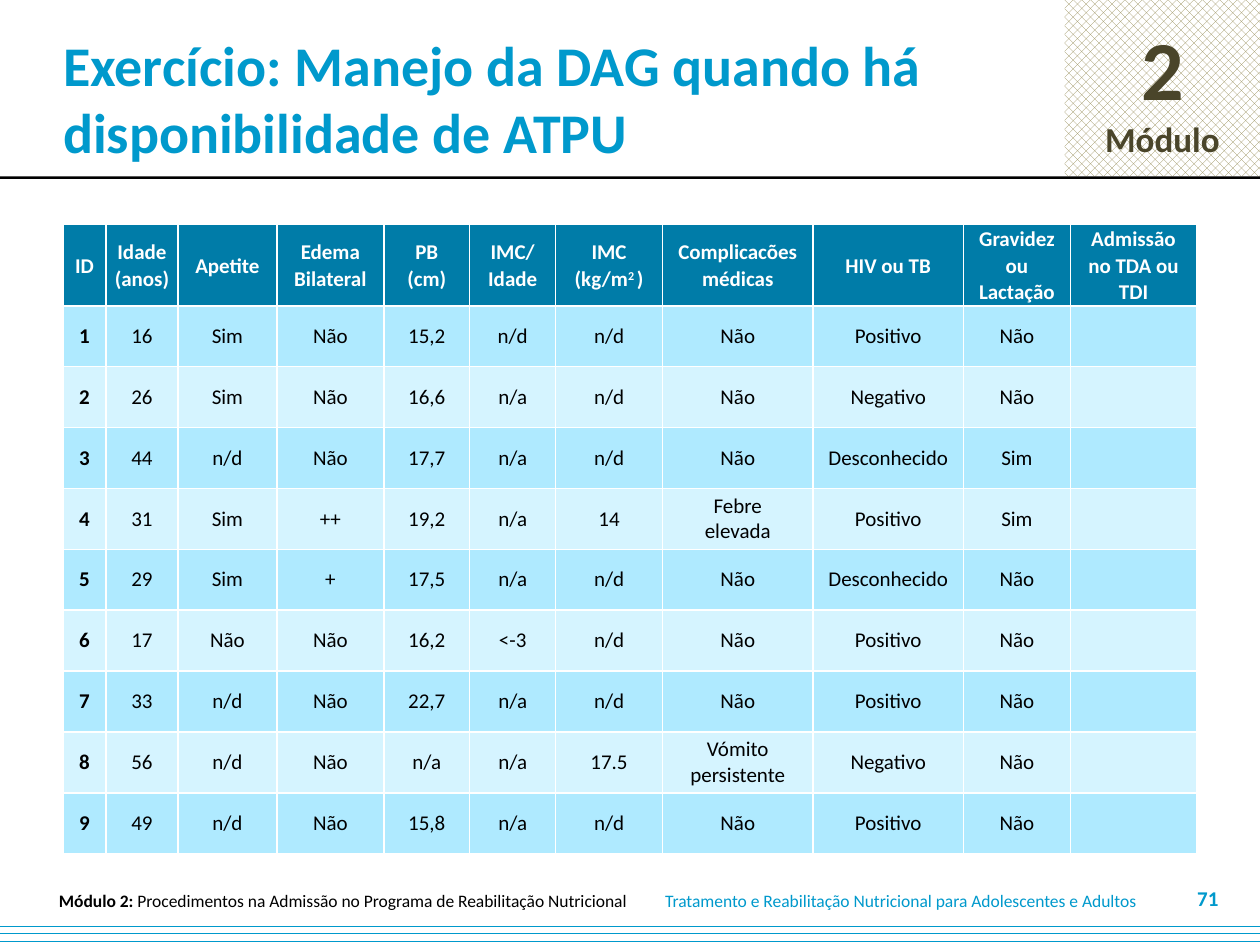
from lxml.etree import SubElement
from pptx import Presentation
from pptx.dml.color import RGBColor
from pptx.enum.dml import MSO_PATTERN as Pattern
from pptx.enum.shapes import MSO_SHAPE as Shape
from pptx.enum.text import MSO_ANCHOR as Anchor, PP_ALIGN as Align
from pptx.oxml.ns import qn
from pptx.util import Pt

# Content
TITLE = "Exercício: Manejo da DAG quando há disponibilidade de ATPU"
HEADERS = [
    "ID", "Idade\n(anos)", "Apetite", "Edema\nBilateral", "PB\n(cm)",
    "IMC/\nIdade", "IMC\n(kg/m^2 ^)", "Complicacões\nmédicas", "HIV ou TB",
    "Gravidez ou Lactação", "Admissão no TDA ou TDI",
]
PATIENTS = [
    ("1", "16", "Sim", "Não", "15,2", "n/d", "n/d", "Não", "Positivo", "Não", ""),
    ("2", "26", "Sim", "Não", "16,6", "n/a", "n/d", "Não", "Negativo", "Não", ""),
    ("3", "44", "n/d", "Não", "17,7", "n/a", "n/d", "Não", "Desconhecido", "Sim", ""),
    ("4", "31", "Sim", "++", "19,2", "n/a", "14", "Febre\nelevada", "Positivo", "Sim", ""),
    ("5", "29", "Sim", "+", "17,5", "n/a", "n/d", "Não", "Desconhecido", "Não", ""),
    ("6", "17", "Não", "Não", "16,2", "<-3", "n/d", "Não", "Positivo", "Não", ""),
    ("7", "33", "n/d", "Não", "22,7", "n/a", "n/d", "Não", "Positivo", "Não", ""),
    ("8", "56", "n/d", "Não", "n/a", "n/a", "17.5", "Vómito persistente", "Negativo", "Não", ""),
    ("9", "49", "n/d", "Não", "15,8", "n/a", "n/d", "Não", "Positivo", "Não", ""),
]
COLUMN_WIDTHS = [24.6, 41.1, 56.6, 61.1, 49.1, 49.1, 61.1, 86, 86, 61.1, 72.2]
HEADER_HEIGHT, ROW_HEIGHT = 46.4, 34.8

# Colours
BLUE, HEADER_BLUE, BROWN, OLIVE = "0099CC", "007CA8", "4A452A", "948A54"
BLACK, WHITE = "000000", "FFFFFF"
ROW_FILLS = ["AFEAFF", "D5F4FF"]


def rgb(value):
    return RGBColor.from_string(value)


def add_span(para, text, size, color, bold=False):
    span = para.add_run()
    span.text = text
    for name, value in {"name": "Calibri", "size": Pt(size), "bold": bold}.items():
        setattr(span.font, name, value)
    span.font.color.rgb = rgb(color)
    return span


def fill_frame(frame, paragraphs, align):
    """Each paragraph is a list of (text, size, colour, bold)."""
    frame.vertical_anchor = Anchor.MIDDLE
    for index, spans in enumerate(paragraphs):
        para = frame.add_paragraph() if index else frame.paragraphs[0]
        para.alignment = align
        for span in spans:
            add_span(para, *span)


def add_text(page, place, paragraphs, align=Align.LEFT, wrap=True, left_inset=7.2):
    frame = page.shapes.add_textbox(*map(Pt, place)).text_frame
    frame.word_wrap = wrap
    frame.margin_left = Pt(left_inset)
    fill_frame(frame, paragraphs, align)


def add_block(page, place, color, pattern=None):
    block = page.shapes.add_shape(Shape.RECTANGLE, *map(Pt, place))
    block.shadow.inherit = False
    block.line.fill.background()
    if pattern is None:
        block.fill.solid()
        block.fill.fore_color.rgb = rgb(color)
    else:
        block.fill.patterned()
        block.fill.pattern = pattern
        block.fill.fore_color.rgb = rgb(color)
        block.fill.back_color.rgb = rgb(WHITE)
    return block


def add_borders(cell, sides):
    props = cell._tc.get_or_add_tcPr()
    for side in sides:
        line = SubElement(props, qn(f"a:ln{side}"), w=str(Pt(1)))
        SubElement(SubElement(line, qn("a:solidFill")), qn("a:srgbClr"), val=WHITE)


def fill_cell(cell, text, fill, color, bold, spacing):
    for name, value in {"margin_left": Pt(5), "margin_right": Pt(5), "margin_top": 0,
                        "margin_bottom": 0, "vertical_anchor": Anchor.MIDDLE}.items():
        setattr(cell, name, value)
    cell.fill.solid()
    cell.fill.fore_color.rgb = rgb(fill)
    for index, line in enumerate(text.split("\n")):
        frame = cell.text_frame
        para = frame.add_paragraph() if index else frame.paragraphs[0]
        para.alignment = Align.CENTER
        para.line_spacing = spacing
        # Text between carets is superscript
        for part, piece in enumerate(line.split("^")):
            if piece:
                span = add_span(para, piece, 12, color, bold)
                if part % 2:
                    span._r.get_or_add_rPr().set("baseline", "30000")


def add_patient_table(page):
    rows = [HEADERS, *PATIENTS]
    heights = [HEADER_HEIGHT] + [ROW_HEIGHT] * len(PATIENTS)
    table = page.shapes.add_table(
        len(rows), len(HEADERS), Pt(36), Pt(128.4),
        Pt(sum(COLUMN_WIDTHS)), Pt(sum(heights))).table
    for column, width in zip(table.columns, COLUMN_WIDTHS):
        column.width = Pt(width)
    for r, (texts, height) in enumerate(zip(rows, heights)):
        table.rows[r].height = Pt(height)
        for c, text in enumerate(texts):
            cell = table.cell(r, c)
            inner = {"L": c > 0, "R": c < len(HEADERS) - 1, "T": r > 0, "B": r < len(rows) - 1}
            add_borders(cell, [side for side, shown in inner.items() if shown])
            if r == 0:
                fill_cell(cell, text, HEADER_BLUE, WHITE, True, 1.05)
            else:
                fill_cell(cell, text, ROW_FILLS[(r - 1) % 2], BLACK, c == 0, 1.0)


def main():
    deck = Presentation()
    deck.slide_width, deck.slide_height = Pt(720), Pt(540)
    page = deck.slides.add_slide(deck.slide_layouts[6])

    # Module badge, header rule and bottom band
    badge = add_block(page, (608.4, 0, 111.6, 100.8), OLIVE, Pattern.PERCENT_50)
    fill_frame(badge.text_frame,
               [[("2", 48, BROWN, True)], [("Módulo", 20, BROWN, True)]], Align.CENTER)
    add_block(page, (-1.4, 100.8, 721.4, 1.4), BLACK)
    add_block(page, (0, 524.9, 720, 15.1), BLUE, Pattern.DASHED_HORIZONTAL)

    # Footer
    add_text(page, (373, 507.6, 291.6, 14.4),
             [[("Tratamento e Reabilitação Nutricional para Adolescentes e Adultos",
                10, BLUE)]], wrap=False)
    add_text(page, (20.9, 507.6, 349.9, 14.4),
             [[("Módulo 2: ", 10, BLACK, True),
               ("Procedimentos na Admissão no Programa de Reabilitação Nutricional",
                10, BLACK)]], Align.CENTER, wrap=False)
    add_text(page, (667.4, 504, 36, 18), [[("71", 12, BLUE, True)]], Align.RIGHT)

    # Title and table
    add_text(page, (0, 0, 617.8, 111.6), [[(TITLE, 32, BLUE, True)]], left_inset=36)
    add_patient_table(page)
    deck.save("out.pptx")


if __name__ == "__main__":
    main()
